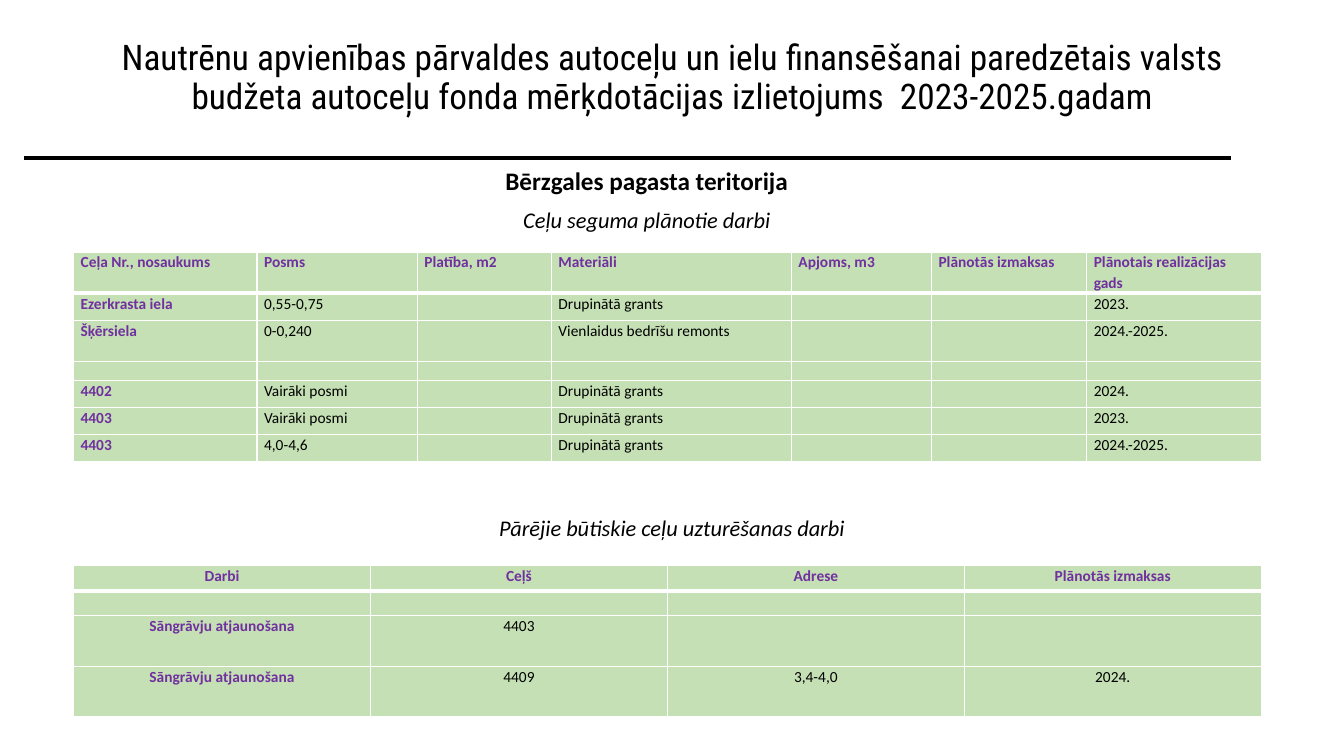
from lxml.etree import SubElement
from pptx import Presentation
from pptx.dml.color import RGBColor
from pptx.enum.shapes import MSO_CONNECTOR
from pptx.enum.text import MSO_ANCHOR, PP_ALIGN
from pptx.oxml.ns import qn
from pptx.util import Inches, Pt

# Content
TITLE = ("Nautrēnu apvienības pārvaldes autoceļu un ielu finansēšanai paredzētais valsts "
         "budžeta autoceļu fonda mērķdotācijas izlietojums  2023-2025.gadam")
HEADINGS = [  # text, (left, top, width, height), font
    ("Bērzgales pagasta teritorija", (3.08, 1.58, 6.67, 0.41), {"size": Pt(18), "bold": True}),
    ("Ceļu seguma plānotie darbi", (3.08, 1.99, 6.67, 0.37), {"size": Pt(16), "italic": True}),
    ("Pārējie būtiskie ceļu uzturēšanas darbi", (3.33, 4.65, 6.67, 0.77),
     {"size": Pt(16), "italic": True}),
]
SURFACE_WORKS = [
    ("Ceļa Nr., nosaukums", "Posms", "Platība, m2", "Materiāli", "Apjoms, m3",
     "Plānotās izmaksas", "Plānotais realizācijas gads"),
    ("Ezerkrasta iela", "0,55-0,75", "", "Drupinātā grants", "", "", "2023."),
    ("Šķērsiela", "0-0,240", "", "Vienlaidus bedrīšu remonts", "", "", "2024.-2025."),
    ("",) * 7,
    ("4402", "Vairāki posmi", "", "Drupinātā grants", "", "", "2024."),
    ("4403", "Vairāki posmi", "", "Drupinātā grants", "", "", "2023."),
    ("4403", "4,0-4,6", "", "Drupinātā grants", "", "", "2024.-2025."),
]
MAINTENANCE_WORKS = [
    ("Darbi", "Ceļš", "Adrese", "Plānotās izmaksas"),
    ("",) * 4,
    ("Sāngrāvju atjaunošana", "4403", "", ""),
    ("Sāngrāvju atjaunošana", "4409", "3,4-4,0", "2024."),
]
WORKS = [  # rows, top, column widths, row heights, alignment
    (SURFACE_WORKS, 2.5, [1.82, 1.59, 1.33, 2.38, 1.39, 1.54, 1.73],
     [0.41, 0.27, 0.41, 0.17, 0.27, 0.27, 0.27], PP_ALIGN.LEFT),
    (MAINTENANCE_WORKS, 5.61, [2.945] * 4, [0.25, 0.25, 0.5, 0.5], PP_ALIGN.CENTER),
]
COLORS = {"ink": "000000", "label": "7030A0", "cell": "C5E0B4", "grid": "FFFFFF"}
TABLE_LEFT = 0.73
CELL_FONT_SIZE = Pt(11)
CELL_FORMAT = {"margin_left": Inches(0.07), "margin_right": Inches(0.07),
               "margin_top": 0, "margin_bottom": 0}


def color(name):
    return RGBColor.from_string(COLORS[name])


def set_all(target, values):
    for key, value in values.items():
        setattr(target, key, value)


def write(paragraph, text, ink, spacing, alignment, font):
    set_all(paragraph, {"alignment": alignment, "line_spacing": spacing})
    run = paragraph.add_run()
    run.text = text
    set_all(run.font, font)
    run.font.color.rgb = color(ink)


def add_borders(cell, top, bottom):
    properties = cell._tc.get_or_add_tcPr()
    for side, width in (("L", 1), ("R", 1), ("T", top), ("B", bottom)):
        border = SubElement(properties, qn("a:ln" + side), w=str(Pt(width)))
        fill = SubElement(border, qn("a:solidFill"))
        SubElement(fill, qn("a:srgbClr"), val=COLORS["grid"])


def add_works(slide, rows, top, widths, heights, alignment):
    table = slide.shapes.add_table(
        len(rows), len(widths), Inches(TABLE_LEFT), Inches(top),
        Inches(sum(widths)), Inches(sum(heights))).table
    for column, width in zip(table.columns, widths):
        column.width = Inches(width)
    for r, (row, height) in enumerate(zip(rows, heights)):
        table.rows[r].height = Inches(height)
        for c, text in enumerate(row):
            cell = table.cell(r, c)
            set_all(cell, CELL_FORMAT)
            # A thick rule separates the header from the body
            add_borders(cell, 3 if r == 1 else 1, 3 if r == 0 else 1)
            cell.fill.solid()
            cell.fill.fore_color.rgb = color("cell")
            paragraph = cell.text_frame.paragraphs[0]
            is_label = r == 0 or c == 0
            if text:
                write(paragraph, text, "label" if is_label else "ink", 1.06, alignment,
                      {"name": "Calibri", "size": CELL_FONT_SIZE, "bold": is_label})
            else:
                paragraph.line_spacing = 1.06
                SubElement(paragraph._p, qn("a:endParaRPr"),
                           sz=str(int(CELL_FONT_SIZE.pt * 100)))


def main():
    deck = Presentation()
    set_all(deck, {"slide_width": Inches(13.33), "slide_height": Inches(7.5)})
    slide = deck.slides.add_slide(deck.slide_layouts[5])

    # Title
    title = slide.shapes.title
    set_all(title, {"left": Inches(0.92), "top": Inches(0.4),
                    "width": Inches(11.5), "height": Inches(1.45)})
    set_all(title.text_frame, {"word_wrap": True, "vertical_anchor": MSO_ANCHOR.MIDDLE,
                               "margin_bottom": Inches(0.74)})
    write(title.text_frame.paragraphs[0], TITLE, "ink", 0.9, PP_ALIGN.CENTER,
          {"name": "Roboto Condensed", "size": Pt(25.2)})

    # Rule under the title
    rule = slide.shapes.add_connector(MSO_CONNECTOR.STRAIGHT, Inches(0.24), Inches(1.57),
                                      Inches(12.21), Inches(1.57))
    rule.line.color.rgb = color("ink")
    rule.line.width = Pt(3)
    SubElement(rule._element.spPr, qn("a:effectLst"))

    # Headings
    for text, box, font in HEADINGS:
        heading = slide.shapes.add_textbox(*map(Inches, box)).text_frame
        set_all(heading, {"word_wrap": True, "vertical_anchor": MSO_ANCHOR.BOTTOM})
        write(heading.paragraphs[0], text, "ink", 1.06, PP_ALIGN.CENTER,
              {"name": "Calibri", **font})

    # Tables
    for works in WORKS:
        add_works(slide, *works)

    deck.save("out.pptx")


if __name__ == "__main__":
    main()
